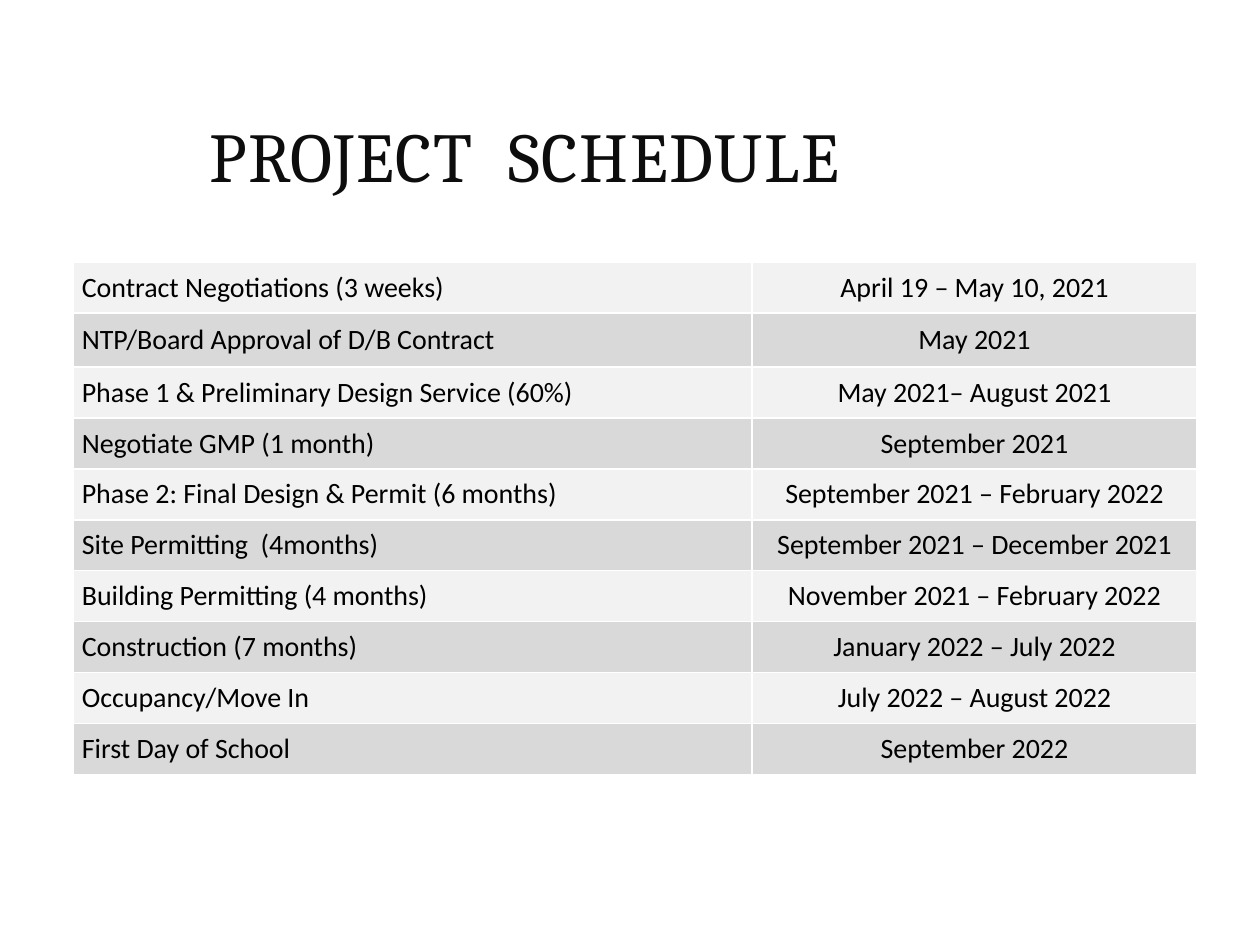
from lxml import etree
from pptx import Presentation
from pptx.dml.color import RGBColor
from pptx.enum.text import MSO_ANCHOR, PP_ALIGN
from pptx.oxml.ns import qn
from pptx.util import Inches, Pt

MIDDLE = MSO_ANCHOR.MIDDLE
LEFT, CENTER = PP_ALIGN.LEFT, PP_ALIGN.CENTER
COLORS = {"title": "0D0D0D", "text": "000000", "light": "F2F2F2",
          "dark": "D9D9D9", "border": "FFFFFF"}
SCHEDULE = [
    ("Contract Negotiations (3 weeks)", "April 19 – May 10, 2021"),
    ("NTP/Board Approval of D/B Contract", "May 2021"),
    ("Phase 1 & Preliminary Design Service (60%)", "May 2021– August 2021"),
    ("Negotiate GMP (1 month)", "September 2021"),
    ("Phase 2: Final Design & Permit (6 months)", "September 2021 – February 2022"),
    ("Site Permitting  (4months)", "September 2021 – December 2021"),
    ("Building Permitting (4 months)", "November 2021 – February 2022"),
    ("Construction (7 months)", "January 2022 – July 2022"),
    ("Occupancy/Move In", "July 2022 – August 2022"),
    ("First Day of School", "September 2022"),
]


def format_text(para, font_name, size, color, align):
    para.alignment = align
    font = para.runs[0].font
    font.name = font_name
    font.size = Pt(size)
    font.color.rgb = RGBColor.from_string(COLORS[color])


def add_borders(cell):
    """Must run before the cell is filled: the schema puts lines ahead of the fill."""
    properties = cell._tc.get_or_add_tcPr()
    for side in ("lnL", "lnR", "lnT", "lnB"):
        line = etree.SubElement(properties, qn(f"a:{side}"), w=str(Pt(1)))
        fill = etree.SubElement(line, qn("a:solidFill"))
        etree.SubElement(fill, qn("a:srgbClr"), val=COLORS["border"])


deck = Presentation()
deck.slide_width, deck.slide_height = Inches(10), Inches(7.5)
page = deck.slides.add_slide(deck.slide_layouts[6])

# Title
title = page.shapes.add_textbox(Inches(0), Inches(0.83), Inches(8.33), Inches(0.92))
frame = title.text_frame
frame.word_wrap = True
frame.vertical_anchor = MIDDLE
frame.text = "PROJECT  SCHEDULE"
para = frame.paragraphs[0]
para.line_spacing = 0.8
format_text(para, "Cambria", 40, "title", CENTER)
para.runs[0]._r.get_or_add_rPr().set("spc", "100")

# Schedule table
table = page.shapes.add_table(len(SCHEDULE), 2, Inches(0.58), Inches(2.08),
                              Inches(8.92), Inches(4.07)).table
table.first_row = False
table.horz_banding = False
for column, width in zip(table.columns, (5.39, 3.53)):
    column.width = Inches(width)

for index, entry in enumerate(SCHEDULE):
    table.rows[index].height = Inches(0.43 if index == 1 else 0.404)
    for column, (text, align) in enumerate(zip(entry, (LEFT, CENTER))):
        cell = table.cell(index, column)
        add_borders(cell)
        cell.fill.solid()
        cell.fill.fore_color.rgb = RGBColor.from_string(COLORS["dark" if index % 2 else "light"])
        cell.vertical_anchor = MIDDLE
        cell.margin_left = cell.margin_right = Inches(0.07)
        cell.margin_top = cell.margin_bottom = 0
        cell.text_frame.text = text
        format_text(cell.text_frame.paragraphs[0], "Calibri", 16, "text", align)

deck.save("out.pptx")
